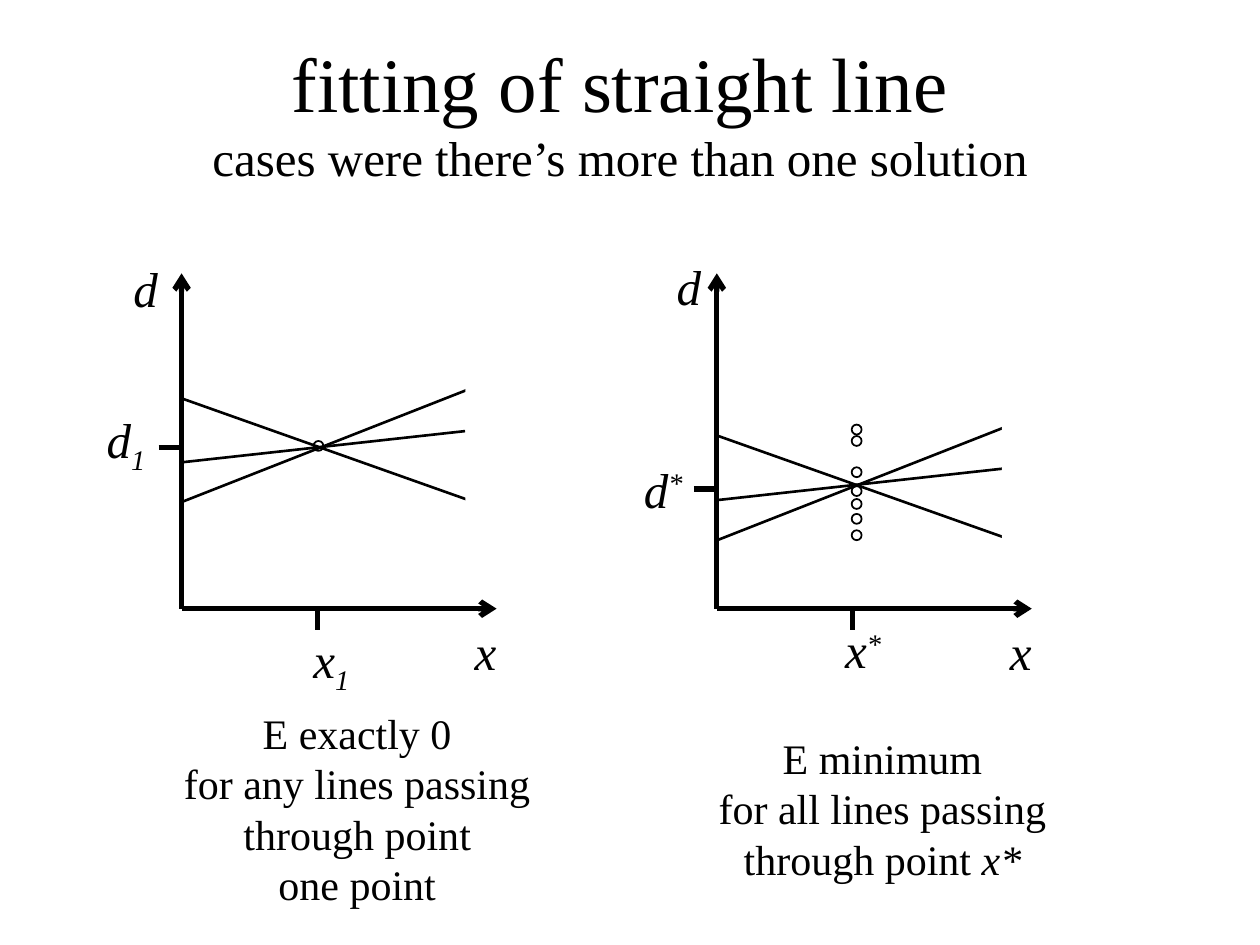
from lxml import etree
from pptx import Presentation
from pptx import util as u
from pptx.dml.color import RGBColor
from pptx.enum import shapes, text
from pptx.oxml.ns import qn

BLACK, WHITE = "000000", "FFFFFF"
SUB, SUPER = -25000, 30000


def color(hex_string):
    return RGBColor.from_string(hex_string)


def add_run(paragraph, words, size=28, italic=False, baseline=None, font="Times New Roman"):
    run = paragraph.add_run()
    run.text = words
    run.font.name, run.font.size, run.font.italic = font, u.Pt(size), italic
    run.font.color.rgb = color(BLACK)
    if baseline:
        run.font._element.set("baseline", str(baseline))


class Board:
    """Drawing style and current slide; all lengths are in centimetres."""

    axis_width, fit_width = 3, 1.5

    def __init__(self, slide):
        self.slide = slide

    def placeholder(self, index, box, paragraphs):
        """Fill a placeholder; each paragraph is a list of (words, format) runs."""
        holder = self.slide.placeholders[index]
        holder.left, holder.top, holder.width, holder.height = map(u.Cm, box)
        frame = holder.text_frame
        frame.auto_size = text.MSO_AUTO_SIZE.NONE
        frame.vertical_anchor = text.MSO_ANCHOR.MIDDLE
        for number, runs in enumerate(paragraphs):
            paragraph = frame.add_paragraph() if number else frame.paragraphs[0]
            paragraph.alignment = text.PP_ALIGN.CENTER
            paragraph.space_before = u.Pt(0)
            properties = paragraph._p.get_or_add_pPr()
            properties.set("marL", "0")
            properties.set("indent", "0")
            etree.SubElement(properties, qn("a:buNone"))
            for words, style in runs:
                add_run(paragraph, words, **style)

    def label(self, x, y, words, mark=None, baseline=None, mark_italic=True, width=1.7):
        frame = self.slide.shapes.add_textbox(*map(u.Cm, (x, y, width, 1.45))).text_frame
        frame.word_wrap = True
        frame.auto_size = text.MSO_AUTO_SIZE.SHAPE_TO_FIT_TEXT
        add_run(frame.paragraphs[0], words, italic=True)
        if mark:
            add_run(frame.paragraphs[0], mark, italic=mark_italic, baseline=baseline)

    def line(self, x1, y1, x2, y2, width, arrow=False):
        connector = self.slide.shapes.add_connector(
            shapes.MSO_CONNECTOR.STRAIGHT, *map(u.Cm, (x1, y1, x2, y2)))
        connector.line.color.rgb = color(BLACK)
        connector.line.width = u.Pt(width)
        if arrow:
            etree.SubElement(connector.line._get_or_add_ln(), qn("a:tailEnd"), type="arrow")
        etree.SubElement(connector._element.spPr, qn("a:effectLst"))

    def shape(self, kind, x, y, width, height, outline=None):
        item = self.slide.shapes.add_shape(kind, *map(u.Cm, (x, y, width, height)))
        item.shadow.inherit = False
        item.fill.solid()
        item.fill.fore_color.rgb = color(WHITE)
        if outline:
            item.line.color.rgb = color(BLACK)
            item.line.width = u.Pt(outline)
        else:
            item.line.fill.background()

    def axes(self, x, d_tick):
        """Axes with origin at x, one tick on each."""
        base = 12.27
        self.line(x, base, x, 5.51, self.axis_width, arrow=True)
        self.line(x, base, x + 6.35, base, self.axis_width, arrow=True)
        self.line(x + 2.74, base, x + 2.74, 12.7, self.axis_width)
        self.line(x - 0.46, d_tick, x - 0.03, d_tick, self.axis_width)
        self.label(x + 5.66, 12.4, "x")

    def points(self, x, tops):
        for top in tops:
            self.shape(shapes.MSO_SHAPE.OVAL, x, top, 0.2, 0.2, outline=1)

    def fan(self, x, y):
        """Three lines through one point, trimmed at the right by a white strip."""
        for x1, y1, x2, y2 in ((-0.02, 2.1, 5.91, -0.23), (0, 0, 5.92, 2.1), (0, 1.29, 5.72, 0.66)):
            self.line(x + x1, y + y1, x + x2, y + y2, self.fit_width)
        self.shape(shapes.MSO_SHAPE.RECTANGLE, x + 5.72, y - 0.41, 0.43, 2.97)


def main():
    deck = Presentation()
    deck.slide_width, deck.slide_height = u.Cm(25.4), u.Cm(19.05)
    board = Board(deck.slides.add_slide(deck.slide_layouts.get_by_name("Two Content")))

    board.placeholder(0, (1.07, 0.64, 22.86, 3.18), [
        [("fitting of straight line", {"size": 44})],
        [("cases were there’s more than one solution", {"size": 28})],
    ])

    caption = {"size": 24}
    board.placeholder(1, (2.54, 14.17, 9.32, 4.24), [
        [("E exactly 0", caption)],
        [("for any lines passing through point", caption)],
        [("one point", caption)],
    ])
    board.placeholder(2, (13.13, 14.17, 9.32, 4.24), [
        [("E minimum", caption)],
        [("for all lines passing through point ", caption), ("x*", {"size": 24, "italic": True})],
    ])

    # One data point
    board.axes(3.66, d_tick=9.02)
    board.points(6.32, [8.89])
    board.fan(3.66, 8.03)
    board.label(2.44, 5.08, "d")
    board.label(6.07, 12.57, "x", "1", SUB)
    board.label(1.9, 8.13, "d", "1", SUB)

    # Several data points at the same x
    board.axes(14.45, d_tick=9.86)
    board.points(17.17, [8.56, 8.79, 9.42, 9.8, 10.06, 10.36, 10.69])
    board.fan(14.48, 8.79)
    board.label(13.39, 5.05, "d")
    board.label(16.79, 12.37, "x", "*", SUPER)
    board.label(12.73, 9.14, "d", "*", SUPER, width=1.37)

    deck.save("out.pptx")


if __name__ == "__main__":
    main()
